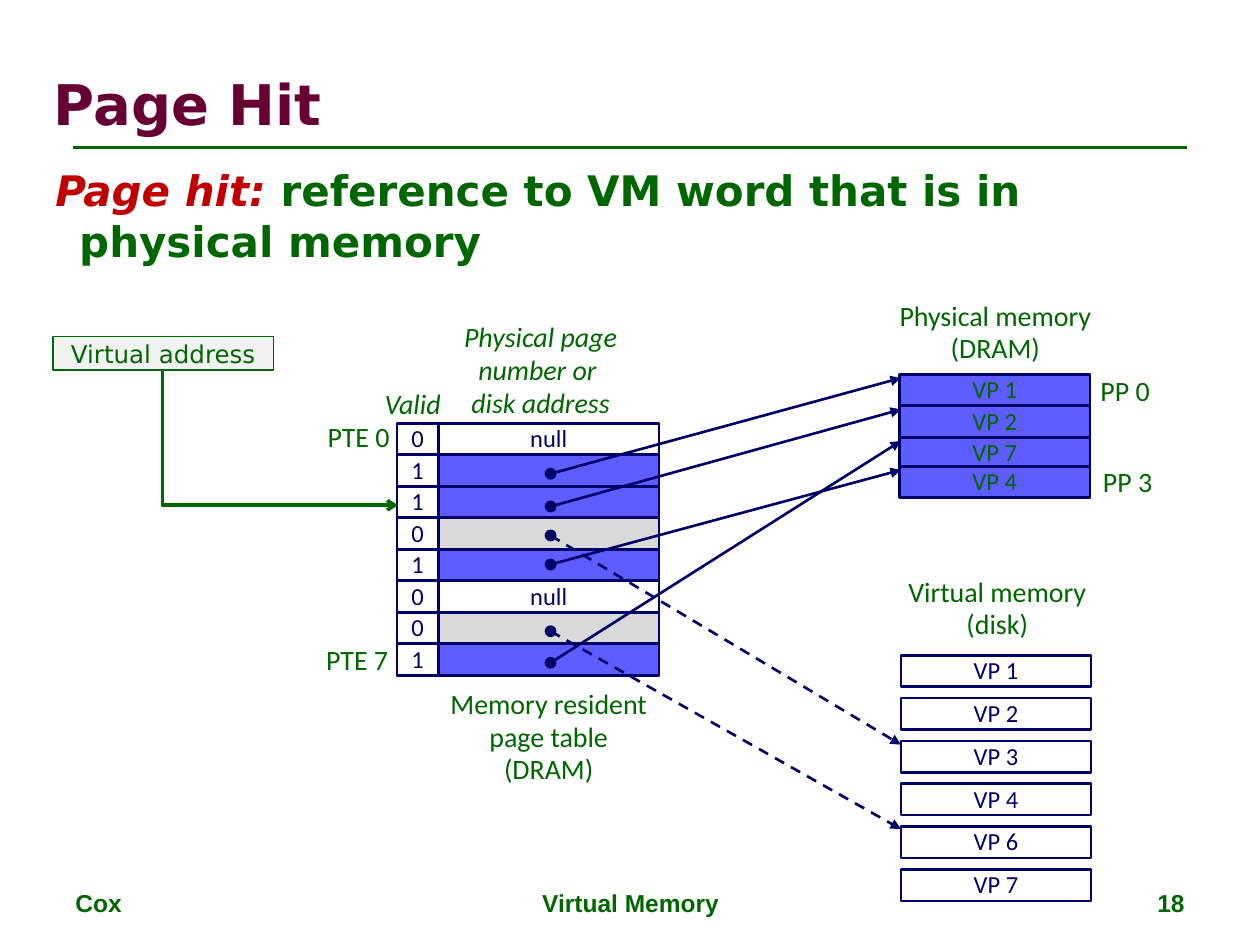
from dataclasses import dataclass, replace
from typing import Optional

from lxml.etree import SubElement
from pptx import Presentation
from pptx.dml.color import RGBColor
from pptx.enum.dml import MSO_LINE
from pptx.enum.shapes import MSO_CONNECTOR, MSO_SHAPE
from pptx.enum.text import MSO_ANCHOR, PP_ALIGN
from pptx.oxml.ns import qn
from pptx.util import Inches, Pt

# The slide is a grid of 40 columns and 30 rows, each a quarter inch.
COLUMNS, ROWS = 40, 30
UNIT = Inches(0.25)

GREEN, NAVY, MAROON, RED = "006600", "000066", "660033", "C00000"
BLUE, GRAY, PALE, WHITE = "5C5CFF", "D9D9D9", "F2F2F2", "FFFFFF"


@dataclass(frozen=True)
class Box:
    column: float
    row: float
    width: float
    height: float


@dataclass(frozen=True)
class TextStyle:
    size: float
    color: str = GREEN
    name: str = "Calibri"
    bold: bool = False
    italic: bool = False
    alignment: PP_ALIGN = PP_ALIGN.CENTER
    line_spacing: float = 0.98
    anchor: MSO_ANCHOR = MSO_ANCHOR.TOP
    wrap: bool = False


@dataclass(frozen=True)
class Entry:
    valid: str
    fill: str
    text: str = ""
    dot_row: Optional[float] = None
    target_row: float = 0


LABEL = TextStyle(16)
ITALIC_LABEL = replace(LABEL, italic=True)
CELL = TextStyle(14, NAVY, anchor=MSO_ANCHOR.MIDDLE)
FRAME_CELL = replace(CELL, color=GREEN)
ADDRESS = TextStyle(14, name="DejaVu Sans", line_spacing=1, anchor=MSO_ANCHOR.MIDDLE, wrap=True)
TITLE = replace(ADDRESS, size=32, color=MAROON, bold=True, alignment=PP_ALIGN.LEFT)
BODY = replace(TITLE, size=24, color=GREEN, anchor=MSO_ANCHOR.TOP)
FOOTER = TextStyle(14, name="Arial", bold=True, line_spacing=1, wrap=True)

TABLE_COLUMN, TABLE_ROW = 12.6, 13.44
VALID_WIDTH, ADDRESS_WIDTH = 1.32, 7
DOT_COLUMN, DOT_SIZE = 17.48, 0.32
MEMORY_COLUMN, MEMORY_WIDTH = 28.6, 6.04
DISK_ROW, DISK_STEP = 20.8, 1.36

ENTRIES = [
    Entry("0", WHITE, "null"),
    Entry("1", BLUE, dot_row=15.04, target_row=12),
    Entry("1", BLUE, dot_row=16.08, target_row=13),
    Entry("0", GRAY, dot_row=17, target_row=23.64),
    Entry("1", BLUE, dot_row=17.92, target_row=14.92),
    Entry("0", WHITE, "null"),
    Entry("0", GRAY, dot_row=20.04, target_row=26.32),
    Entry("1", BLUE, dot_row=21.04, target_row=14),
]
FRAMES = [("VP 7", 13.88), ("VP 4", 14.8), ("VP 2", 12.88), ("VP 1", 11.88)]
DISK_PAGES = ["VP 1", "VP 2", "VP 3", "VP 4", "VP 6", "VP 7"]
LABELS = [
    ("Memory resident\npage table\n(DRAM)", Box(13.72, 21.64, 7.4, 3.56), LABEL),
    ("Physical memory\n(DRAM)", Box(28.04, 9.32, 7.12, 2.52), LABEL),
    ("Virtual memory\n(disk)", Box(28.28, 18.08, 6.76, 2.52), LABEL),
    ("Valid", Box(11.6, 12.12, 3, 1.48), ITALIC_LABEL),
    ("Physical page\nnumber or \ndisk address", Box(14.2, 10, 5.92, 3.6), ITALIC_LABEL),
    ("PTE 0", Box(9.96, 13.16, 2.8, 1.48), replace(LABEL, alignment=PP_ALIGN.RIGHT)),
    ("PTE 7", Box(9.92, 20.24, 2.8, 1.48), replace(LABEL, alignment=PP_ALIGN.RIGHT)),
    ("PP 0", Box(34.52, 11.72, 2.4, 1.48), LABEL),
    ("PP 3", Box(34.6, 14.6, 2.4, 1.48), LABEL),
    ("Cox", Box(2, 28, 9.32, 1.4), replace(FOOTER, alignment=PP_ALIGN.LEFT)),
    ("Virtual Memory", Box(13.68, 28, 12.68, 1.4), FOOTER),
    ("18", Box(28.68, 28, 9.32, 1.4), replace(FOOTER, alignment=PP_ALIGN.RIGHT)),
]


def rgb(color: str) -> RGBColor:
    return RGBColor.from_string(color)


def lengths(*units: float) -> list[int]:
    """Turn grid units into slide lengths."""
    return [round(unit * UNIT) for unit in units]


def place(box: Box) -> list[int]:
    return lengths(box.column, box.row, box.width, box.height)


def apply_formats(target, formats: dict) -> None:
    for name, value in formats.items():
        setattr(target, name, value)


def add_run(paragraph, text: str, style: TextStyle) -> None:
    run = paragraph.add_run()
    run.text = text
    apply_formats(run.font, {"name": style.name, "size": Pt(style.size),
                             "bold": style.bold, "italic": style.italic})
    run.font.color.rgb = rgb(style.color)


def write(frame, text: str, style: TextStyle) -> None:
    """Fill a text frame with one paragraph for each line of text."""
    apply_formats(frame, {"word_wrap": style.wrap, "vertical_anchor": style.anchor})
    for index, line in enumerate(text.split("\n")):
        paragraph = frame.add_paragraph() if index else frame.paragraphs[0]
        apply_formats(paragraph, {"alignment": style.alignment,
                                  "line_spacing": style.line_spacing})
        add_run(paragraph, line, style)


def add_text(slide, text: str, box: Box, style: TextStyle):
    frame = slide.shapes.add_textbox(*place(box)).text_frame
    write(frame, text, style)
    return frame.paragraphs[0]


def add_block(slide, box: Box, fill: Optional[str], text: str = "", style: TextStyle = CELL,
              line: str = NAVY, width: float = 1.5, kind: MSO_SHAPE = MSO_SHAPE.RECTANGLE) -> None:
    shape = slide.shapes.add_shape(kind, *place(box))
    shape.shadow.inherit = False
    if fill:
        shape.fill.solid()
        shape.fill.fore_color.rgb = rgb(fill)
    else:
        shape.fill.background()
    shape.line.color.rgb = rgb(line)
    shape.line.width = Pt(width)
    if text:
        write(shape.text_frame, text, style)


def add_line(slide, start: tuple, end: tuple, color: str = NAVY, width: float = 1.5,
             head: str = "", kind: MSO_CONNECTOR = MSO_CONNECTOR.STRAIGHT):
    connector = slide.shapes.add_connector(kind, *lengths(*start, *end))
    connector.line.color.rgb = rgb(color)
    connector.line.width = Pt(width)
    properties = connector._element.spPr
    if head:
        SubElement(properties.find(qn("a:ln")), qn("a:tailEnd"), type=head)
    SubElement(properties, qn("a:effectLst"))
    return connector


def add_heading(slide) -> None:
    add_line(slide, (2.32, 4.68), (COLUMNS - 2.32, 4.68), GREEN)
    add_text(slide, "Page Hit", Box(1.32, 1.56, 36.24, 3.44), TITLE)
    paragraph = add_text(slide, "Page hit: ", Box(1.36, 5.04, 36.36, 2.64),
                         replace(BODY, color=RED, italic=True))
    add_run(paragraph, "reference to VM word that is in physical memory", BODY)
    indent = Inches(0.19)
    apply_formats_to_indent = {"marL": str(indent), "indent": str(-indent)}
    for name, value in apply_formats_to_indent.items():
        paragraph._p.get_or_add_pPr().set(name, value)


def add_page_table(slide) -> None:
    for index, entry in enumerate(ENTRIES):
        row = TABLE_ROW + index
        add_block(slide, Box(TABLE_COLUMN + VALID_WIDTH, row, ADDRESS_WIDTH, 1),
                  entry.fill, entry.text)
        add_block(slide, Box(TABLE_COLUMN, row, VALID_WIDTH, 1), None, entry.valid)


def add_pointers(slide) -> None:
    for entry in ENTRIES:
        if entry.dot_row is None:
            continue
        pointer = add_line(slide, (DOT_COLUMN, entry.dot_row),
                           (MEMORY_COLUMN, entry.target_row), head="triangle")
        if entry.valid == "0":
            pointer.line.dash_style = MSO_LINE.DASH
        add_block(slide, Box(DOT_COLUMN - DOT_SIZE / 2, entry.dot_row - DOT_SIZE / 2,
                             DOT_SIZE, DOT_SIZE), NAVY, width=1, kind=MSO_SHAPE.OVAL)


def add_memories(slide) -> None:
    for name, row in FRAMES:
        add_block(slide, Box(MEMORY_COLUMN - 0.04, row, MEMORY_WIDTH, 1), BLUE, name, FRAME_CELL)
    for index, name in enumerate(DISK_PAGES):
        row = DISK_ROW + index * DISK_STEP
        add_block(slide, Box(MEMORY_COLUMN, row, MEMORY_WIDTH, 1), WHITE, name)


def add_virtual_address(slide) -> None:
    add_block(slide, Box(1.68, 10.68, 7, 1.08), PALE, "Virtual address", ADDRESS, GREEN, 1)
    elbow = add_line(slide, (11.04, 10.16), (6.76, 17.64), GREEN, 2, "arrow", MSO_CONNECTOR.ELBOW)
    properties = elbow._element.spPr
    properties.find(qn("a:prstGeom")).set("prst", "bentConnector2")
    properties.find(qn("a:xfrm")).set("rot", str(270 * 60000))


def main() -> None:
    presentation = Presentation()
    presentation.slide_width, presentation.slide_height = lengths(COLUMNS, ROWS)
    slide = presentation.slides.add_slide(presentation.slide_layouts[6])
    add_heading(slide)
    add_page_table(slide)
    add_memories(slide)
    add_pointers(slide)
    for text, box, style in LABELS:
        add_text(slide, text, box, style)
    add_virtual_address(slide)
    presentation.save("out.pptx")


if __name__ == "__main__":
    main()
